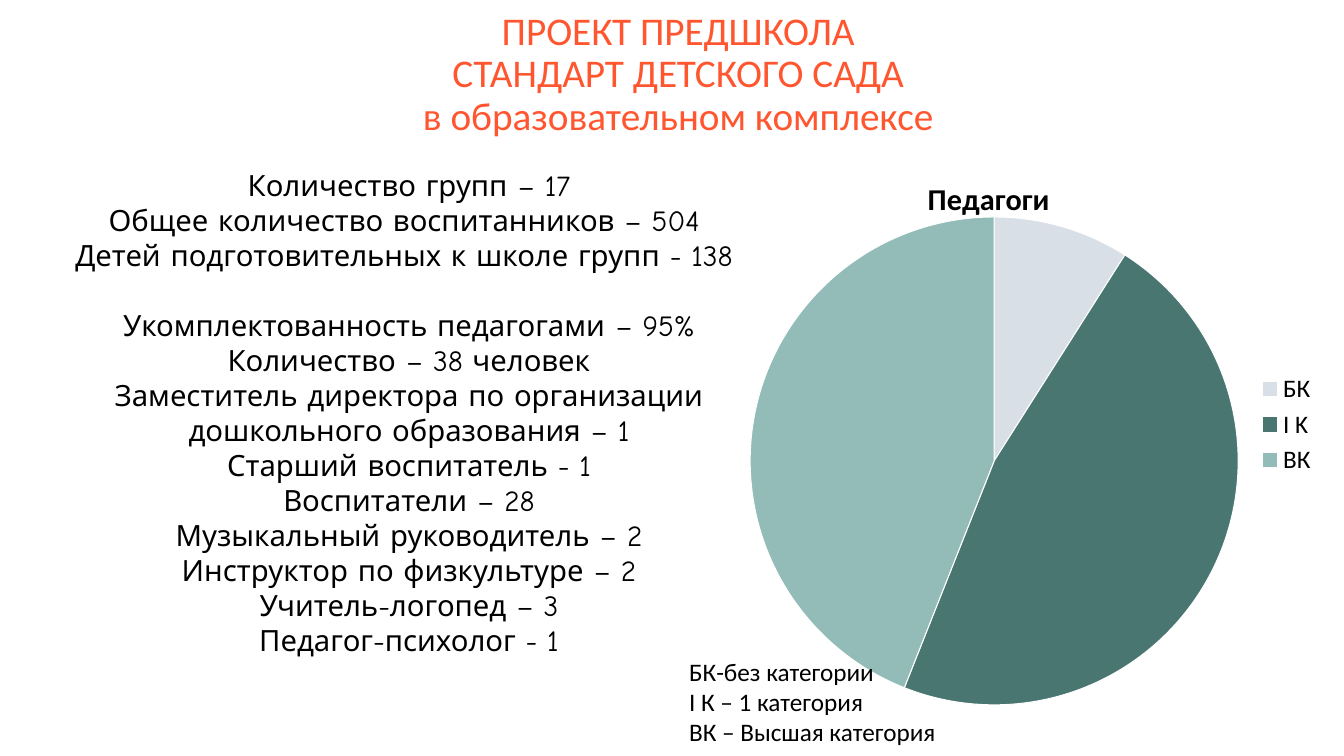
"""Build the kindergarten staffing slide with a pie chart of teacher categories."""
from lxml import etree
from pptx import Presentation
from pptx.chart.data import CategoryChartData
from pptx.dml.color import RGBColor
from pptx.enum.chart import XL_CHART_TYPE, XL_LEGEND_POSITION
from pptx.enum.text import MSO_ANCHOR, PP_ALIGN
from pptx.oxml.ns import qn
from pptx.util import Inches, Pt

TITLE = "ПРОЕКТ ПРЕДШКОЛА\vСТАНДАРТ ДЕТСКОГО САДА\vв образовательном комплексе"
GROUP_FACTS = [
    "Количество групп – 17",
    "Общее количество воспитанников – 504 ",
    "Детей подготовительных к школе групп - 138 ",
]
STAFF_FACTS = [
    "Укомплектованность педагогами – 95%",
    "Количество – 38 человек",
    "Заместитель директора по организации дошкольного образования – 1",
    "Старший воспитатель - 1",
    "Воспитатели – 28",
    "Музыкальный руководитель – 2",
    "Инструктор по физкультуре – 2",
    "Учитель-логопед – 3",
    "Педагог-психолог - 1",
]
CATEGORY_NOTES = ["БК-без категории", "I К – 1 категория", "ВК – Высшая категория"]

BLACK = RGBColor(0x00, 0x00, 0x00)
WHITE = RGBColor(0xFF, 0xFF, 0xFF)
ORANGE = RGBColor(0xFF, 0x56, 0x2F)
PALE = RGBColor(0xD9, 0xDF, 0xE7)
DARK_TEAL = RGBColor(0x4A, 0x76, 0x72)
LIGHT_TEAL = RGBColor(0x93, 0xBB, 0xB7)

CHART_TITLE = "Педагоги"
SLICES = [("БК", 9, PALE), ("I K", 47, DARK_TEAL), ("ВК", 44, LIGHT_TEAL)]

FACTS_BOX = (40, 162, 738, 556)
CHART_BOX = (735, 130, 592, 589)
NOTES_BOX = (679, 651, 694, 102)
TITLE_BOX = (12, 45, 1332, 60)
PIE_BOX = (750, 217, 488, 488)
CHART_TITLE_CORNER = (922, 172)

EMU_PER_PX = 914400 / 100.8
FACT_LINE = Pt(25)


def to_emu(box):
    return [round(length * EMU_PER_PX) for length in box]


def style_font(font, size, color, name="Calibri", bold=False):
    font.size, font.name, font.bold = Pt(size), name, bold
    font.color.rgb = color


def add_text(slide, box, lines, size, color, name="Calibri", align=PP_ALIGN.LEFT):
    frame = slide.shapes.add_textbox(*to_emu(box)).text_frame
    frame.word_wrap = True
    for index, line in enumerate(lines):
        paragraph = frame.paragraphs[0] if index == 0 else frame.add_paragraph()
        paragraph.text = line
        paragraph.alignment = align
        style_font(paragraph.font, size, color, name)
    return frame


def place(parent, index, corner, size=(), inner=False):
    for old in parent.findall(qn("c:layout")):
        parent.remove(old)
    layout = etree.Element(qn("c:layout"))
    manual = etree.SubElement(layout, qn("c:manualLayout"))
    left, top, width, height = CHART_BOX
    settings = [("layoutTarget", "inner")] if inner else []
    settings += [("xMode", "edge"), ("yMode", "edge")]
    settings += [("x", (corner[0] - left) / width), ("y", (corner[1] - top) / height)]
    settings += zip("wh", (size[i] / (width, height)[i] for i in range(len(size))))
    for tag, value in settings:
        text = value if isinstance(value, str) else f"{value:.4f}"
        etree.SubElement(manual, qn(f"c:{tag}")).set("val", text)
    parent.insert(index, layout)


def add_pie(slide):
    data = CategoryChartData()
    data.categories = [name for name, _, _ in SLICES]
    data.add_series(CHART_TITLE, [value for _, value, _ in SLICES])
    chart = slide.shapes.add_chart(XL_CHART_TYPE.PIE, *to_emu(CHART_BOX), data).chart
    style_font(chart.font, 18, BLACK)

    chart.has_title = True
    title_paragraph = chart.chart_title.text_frame.paragraphs[0]
    title_paragraph.text = CHART_TITLE
    style_font(title_paragraph.font, 21.6, BLACK, bold=True)
    chart.has_legend = True
    chart.legend.position = XL_LEGEND_POSITION.RIGHT
    chart.legend.include_in_layout = False

    plot = chart.plots[0]
    plot.vary_by_categories = True
    for index, (_, _, color) in enumerate(SLICES):
        slice_format = plot.series[0].points[index].format
        slice_format.fill.solid()
        slice_format.fill.fore_color.rgb = color
        slice_format.line.color.rgb = WHITE
        slice_format.line.width = Pt(0.75)

    place(chart.chart_title._element, 1, CHART_TITLE_CORNER)
    plot_area = chart._chartSpace.find(".//" + qn("c:plotArea"))
    place(plot_area, 0, PIE_BOX[:2], PIE_BOX[2:], inner=True)


def main():
    presentation = Presentation()
    presentation.slide_width, presentation.slide_height = Inches(13.33), Inches(7.5)
    slide = presentation.slides.add_slide(presentation.slide_layouts[6])

    facts = add_text(slide, FACTS_BOX, GROUP_FACTS + STAFF_FACTS, 20.9, BLACK,
                     "Comic Neue", PP_ALIGN.CENTER)
    for paragraph in facts.paragraphs:
        paragraph.line_spacing = FACT_LINE
    facts.paragraphs[len(GROUP_FACTS)].space_before = FACT_LINE

    add_pie(slide)
    add_text(slide, NOTES_BOX, CATEGORY_NOTES, 18, BLACK)

    title = add_text(slide, TITLE_BOX, [TITLE], 28, ORANGE, align=PP_ALIGN.CENTER)
    title.vertical_anchor = MSO_ANCHOR.MIDDLE
    title.paragraphs[0].line_spacing = 0.9
    presentation.save("out.pptx")


if __name__ == "__main__":
    main()
